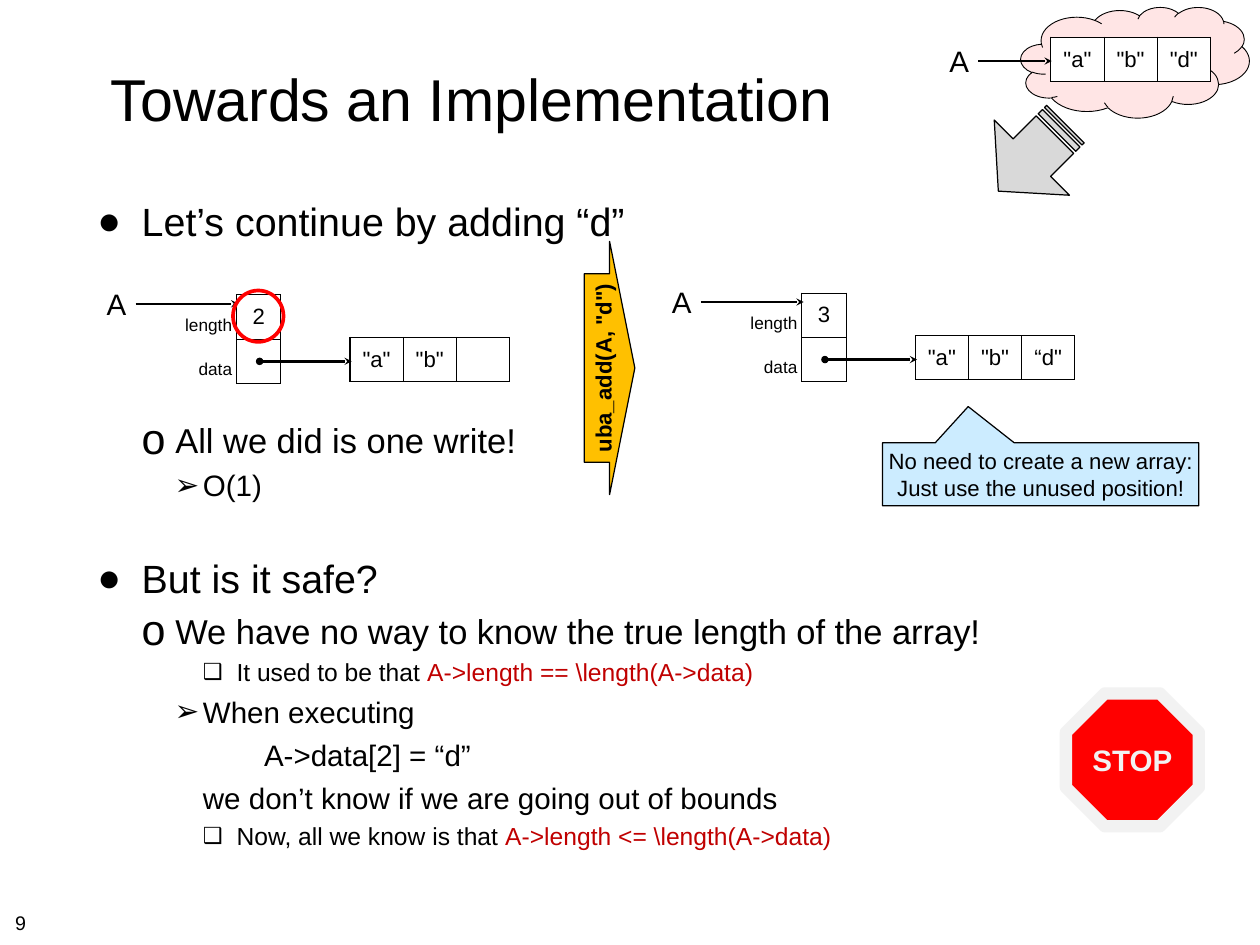
from dataclasses import dataclass
from typing import Optional

from lxml.etree import SubElement
from pptx import Presentation
from pptx.dml.color import RGBColor as Rgb
from pptx.enum.shapes import MSO_CONNECTOR as Link, MSO_SHAPE as Kind
from pptx.enum.text import MSO_ANCHOR as Anchor, MSO_AUTO_SIZE as Fit, PP_ALIGN as Align
from pptx.oxml.ns import qn
from pptx.util import Inches, Pt

HUES = {
    "black": "000000", "white": "FFFFFF", "red": "FF0000", "code": "C00000",
    "sky": "CCECFF", "gold": "FFC000", "grey": "D9D9D9", "pale": "F2F2F2", "rose": "FFE5E5",
}
FONT = "Arial"
CELL = 0.5
SLOT = 0.6


@dataclass
class Box:
    left: float
    top: float
    width: float
    height: float

    def place(self) -> tuple:
        return tuple(map(Inches, (self.left, self.top, self.width, self.height)))


@dataclass
class Style:
    size: float
    hue: str = "black"
    bold: bool = False
    align: Align = Align.CENTER
    anchor: Anchor = Anchor.MIDDLE
    pads: tuple = (0.06, 0.06, 0.06, 0.06)
    wrap: bool = True


@dataclass
class Figure:
    kind: Kind
    box: Box
    fill: Optional[str] = None
    line: str = "black"
    weight: float = 1
    turn: float = 0
    tweaks: tuple = ()
    text: str = ""
    style: Optional[Style] = None


@dataclass
class Level:
    size: float
    margin: float
    hang: float
    before: float
    mark: str = ""
    scale: int = 100


@dataclass
class Point:
    level: Level
    text: str
    code: str = ""
    gap: float = 0


TOP = Level(32, 0.5, 0.5, 8, "●")
SUB = Level(28, 0.88, 0.38, 7, "o", 125)
STEP = Level(24, 1.19, 0.32, 6, "➢")
PLAIN = Level(24, 1.19, 0, 6)
INNER = Level(24, 1.88, 0, 6)
NOTE = Level(20, 1.57, 0.38, 4.8, "❑", 90)

POINTS = [
    Point(TOP, "Let’s continue by adding “d”"),
    Point(SUB, "All we did is one write!", gap=134.4),
    Point(STEP, "O(1)"),
    Point(TOP, "But is it safe?", gap=33.6),
    Point(SUB, "We have no way to know the true length of the array!"),
    Point(NOTE, "It used to be that ", "A->length == \\length(A->data)"),
    Point(STEP, "When executing"),
    Point(INNER, "A->data[2] = “d”"),
    Point(PLAIN, "we don’t know if we are going out of bounds"),
    Point(NOTE, "Now, all we know is that ", "A->length <= \\length(A->data)"),
]

NAME = Style(24, pads=(0.1, 0.05, 0.1, 0.05), wrap=False)
VALUE = Style(18, pads=(0.1, 0.05, 0.1, 0.05))
LABEL = Style(14, align=Align.RIGHT, anchor=Anchor.BOTTOM, pads=(0.05,) * 4)

FIGURES = [
    Figure(Kind.RECTANGULAR_CALLOUT, Box(9.96, 5, 3.57, 0.71), "sky", tweaks=(-0.229, -1.077),
           text="No need to create a new array:\vJust use the unused position!",
           style=Style(18, pads=(0.05,) * 4, wrap=False)),
    Figure(Kind.OCTAGON, Box(12.03, 7.83, 1.5, 1.5), "red", "pale", 10,
           text="STOP", style=Style(24, "pale", True, pads=(0,) * 4)),
    Figure(Kind.DOWN_ARROW, Box(5.45, 3.87, 2.86, 0.57), "gold", turn=270, tweaks=(0.744, 0.5),
           text='uba_add(A, "d")', style=Style(18, bold=True, pads=(0.06, 0.06, 0.06, 0))),
    Figure(Kind.STRIPED_RIGHT_ARROW, Box(11.11, 1.18, 1.07, 1.2), "grey", turn=135),
    Figure(Kind.CLOUD, Box(11.52, 0.08, 2.58, 1.25), "rose", weight=0.75),
]
RING = Figure(Kind.OVAL, Box(2.63, 3.28, 0.57, 0.58), line="red", weight=3)


def tint(name: str) -> Rgb:
    return Rgb.from_string(HUES[name])


def ink(run, size: float, hue: str = "black", bold: bool = False) -> None:
    run.font.name, run.font.size, run.font.bold = FONT, Pt(size), bold
    run.font.color.rgb = tint(hue)


def dress(frame, style: Style) -> None:
    for para in frame.paragraphs:
        para.alignment = style.align
        for run in para.runs:
            ink(run, style.size, style.hue, style.bold)


def write(frame, text: str, style: Style) -> None:
    frame.text = text
    frame.auto_size = Fit.NONE
    frame.word_wrap = style.wrap
    frame.vertical_anchor = style.anchor
    (frame.margin_left, frame.margin_top,
     frame.margin_right, frame.margin_bottom) = map(Inches, style.pads)
    dress(frame, style)


def add_text(slide, box: Box, text: str, style: Style) -> None:
    write(slide.shapes.add_textbox(*box.place()).text_frame, text, style)


def add_figure(slide, fig: Figure) -> None:
    shape = slide.shapes.add_shape(fig.kind, *fig.box.place())
    shape.shadow.inherit = False
    shape.rotation = fig.turn
    for i, tweak in enumerate(fig.tweaks):
        shape.adjustments[i] = tweak
    if fig.fill:
        shape.fill.solid()
        shape.fill.fore_color.rgb = tint(fig.fill)
    else:
        shape.fill.background()
    shape.line.color.rgb, shape.line.width = tint(fig.line), Pt(fig.weight)
    if fig.style:
        write(shape.text_frame, fig.text, fig.style)


def add_arrow(slide, left: float, right: float, y: float, dot: bool = False) -> None:
    line = slide.shapes.add_connector(Link.STRAIGHT, *map(Inches, (left, y, right, y)))
    line.line.color.rgb, line.line.width = tint("black"), Pt(2)
    props = line._element.spPr
    edge = props.find(qn("a:ln"))
    if dot:
        SubElement(edge, qn("a:headEnd"), type="oval")
    SubElement(edge, qn("a:tailEnd"), type="stealth")
    SubElement(props, qn("a:effectLst"))


def fill_cell(cell, text: str, style: Style, sides: str, fill: Optional[str]) -> None:
    cell.text = text
    cell.vertical_anchor = style.anchor
    (cell.margin_left, cell.margin_top,
     cell.margin_right, cell.margin_bottom) = map(Inches, style.pads)
    dress(cell.text_frame, style)
    props = cell._tc.get_or_add_tcPr()
    for side in "LRTB":
        edge = SubElement(props, qn(f"a:ln{side}"), w=str(Pt(1)))
        if side in sides:
            SubElement(SubElement(edge, qn("a:solidFill")), qn("a:srgbClr"), val=HUES["black"])
        else:
            SubElement(edge, qn("a:noFill"))
    if fill:
        cell.fill.solid()
        cell.fill.fore_color.rgb = tint(fill)
    else:
        cell.fill.background()


def add_grid(slide, left: float, top: float, widths: list[float], rows: int):
    box = Box(left, top, sum(widths), rows * CELL)
    grid = slide.shapes.add_table(rows, len(widths), *box.place()).table
    grid.first_row = grid.horz_banding = False
    for col, width in zip(grid.columns, widths):
        col.width = Inches(width)
    return grid


def add_array(slide, left: float, top: float, items: list[str]) -> None:
    grid = add_grid(slide, left, top, [SLOT] * len(items), 1)
    for i, item in enumerate(items):
        fill_cell(grid.cell(0, i), item, VALUE, "LRTB", "white")


def add_struct(slide, left: float, top: float, count: str, items: list[str]) -> None:
    grid = add_grid(slide, left, top, [0.7, 0.5], 2)
    for i, (label, value) in enumerate([("length", count), ("data", "")]):
        fill_cell(grid.cell(i, 0), label, LABEL, "R", None)
        fill_cell(grid.cell(i, 1), value, VALUE, "LRTB", None)
    add_text(slide, Box(left - 0.87, top - 0.15, 0.43, 0.5), "A", NAME)
    add_arrow(slide, left - 0.44, left + 0.72, top + 0.1)
    add_array(slide, left + 1.98, top + 0.48, items)
    add_arrow(slide, left + 0.96, left + 2, top + 0.75, dot=True)


def add_points(slide, box: Box, points: list[Point]) -> None:
    frame = slide.shapes.add_textbox(*box.place()).text_frame
    write(frame, "\n".join(p.text for p in points),
          Style(24, align=Align.LEFT, anchor=Anchor.TOP))
    for para, point in zip(frame.paragraphs, points):
        level = point.level
        if point.code:
            para.add_run().text = point.code
        for run, hue in zip(para.runs, ("black", "code")):
            ink(run, level.size, hue)
        para.space_before = Pt(level.before + point.gap)
        props = para._p.get_or_add_pPr()
        props.set("marL", str(Inches(level.margin)))
        props.set("indent", str(-Inches(level.hang)))
        if level.mark:
            SubElement(props, qn("a:buSzPct"), val=str(level.scale * 1000))
            SubElement(props, qn("a:buFont"), typeface=FONT)
            SubElement(props, qn("a:buChar"), char=level.mark)


def main() -> None:
    deck = Presentation()
    deck.slide_width, deck.slide_height = Inches(14.22), Inches(10.67)
    slide = deck.slides.add_slide(deck.slide_layouts[5])
    title = slide.shapes.title
    title.left, title.top, title.width, title.height = Box(1.04, 0.28, 8.57, 1.64).place()
    write(title.text_frame, "Towards an Implementation", Style(48))
    add_points(slide, Box(1.04, 2.17, 12.14, 7.54), POINTS)
    for fig in FIGURES:
        add_figure(slide, fig)
    add_text(slide, Box(10.61, 0.44, 0.43, 0.5), "A", NAME)
    add_array(slide, 11.86, 0.42, ['"a"', '"b"', '"d"'])
    add_arrow(slide, 11.04, 11.87, 0.69)
    add_struct(slide, 1.97, 3.33, "2", ['"a"', '"b"', ""])
    add_struct(slide, 8.35, 3.31, "3", ['"a"', '"b"', '“d"'])
    add_figure(slide, RING)
    add_text(slide, Box(0.11, 10.23, 0.37, 0.35), "9",
             Style(16, align=Align.LEFT, anchor=Anchor.TOP, wrap=False))
    deck.save("out.pptx")


if __name__ == "__main__":
    main()
